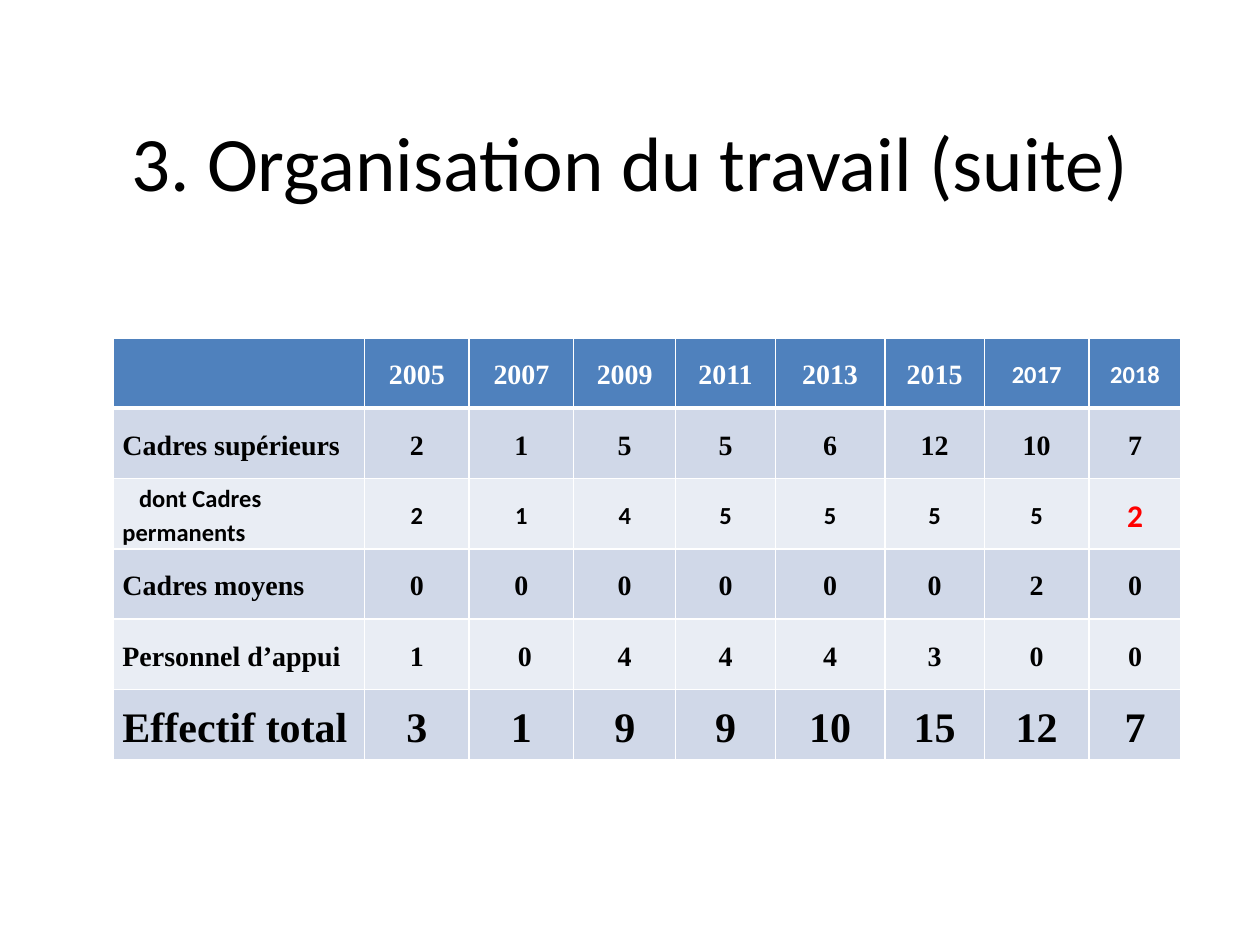
from lxml.etree import SubElement
from pptx import Presentation
from pptx.dml.color import RGBColor
from pptx.enum.text import MSO_ANCHOR, PP_ALIGN
from pptx.oxml.ns import qn
from pptx.util import Pt

TITLE = "3. Organisation du travail (suite)"
YEARS = ["", "2005", "2007", "2009", "2011", "2013", "2015", "2017", "2018"]
STAFF = [
    ["Cadres supérieurs", "2", "1", "5", "5", "6", "12", "10", "7"],
    ["dont Cadres permanents", "2", "1", "4", "5", "5", "5", "5", "2"],
    ["Cadres moyens", "0", "0", "0", "0", "0", "0", "2", "0"],
    ["Personnel d’appui", "1", " 0", "4", "4", "4", "3", "0", "0"],
    ["Effectif total", "3", "1", "9", "9", "10", "15", "12", "7"],
]
ROWS = [YEARS] + STAFF
COLUMN_WIDTHS = [143.3, 59.8, 59.8, 58.3, 56.9, 62.6, 56.9, 59.8, 52.6]
ROW_HEIGHT = 40.2
SUBGROUP_ROW, TOTAL_ROW = 2, 5
SUBGROUP_INDENT = 9.5
COLORS = {
    "header": "4F81BD",
    "odd": "D0D8E8",
    "even": "E9EDF4",
    "white": "FFFFFF",
    "text": "000000",
    "alert": "FF0000",
}


def rgb(name):
    return RGBColor.from_string(COLORS[name])


def cell_font(row, column):
    """Return the font name, size and colour name of a table cell."""
    if row == 0:
        recent = column >= 7
        return ("Calibri", 14, "white") if recent else ("Times New Roman", 16, "white")
    if row == SUBGROUP_ROW:
        last = column == len(YEARS) - 1
        return ("Calibri", 18, "alert") if last else ("Calibri", 14, "text")
    return "Times New Roman", 24 if row == TOTAL_ROW else 16, "text"


def add_border(cell, side, width):
    line = SubElement(cell._tc.get_or_add_tcPr(), qn(f"a:{side}"), w=str(Pt(width)))
    fill = SubElement(line, qn("a:solidFill"))
    SubElement(fill, qn("a:srgbClr"), val=COLORS["white"])


def format_cell(cell, row, column):
    for side in ("lnL", "lnR", "lnT", "lnB"):
        if side != "lnT" or row == 0:
            add_border(cell, side, 3 if row == 0 and side == "lnB" else 1)
    cell.fill.solid()
    band = "header" if row == 0 else ("even", "odd")[row % 2]
    cell.fill.fore_color.rgb = rgb(band)
    cell.vertical_anchor = MSO_ANCHOR.MIDDLE
    cell.margin_left = cell.margin_right = Pt(5)
    cell.margin_top = cell.margin_bottom = 0

    cell.text = ROWS[row][column]
    para = cell.text_frame.paragraphs[0]
    para.alignment = PP_ALIGN.CENTER if column else PP_ALIGN.LEFT
    para.line_spacing = 1.15
    para.space_after = Pt(10)
    if row == SUBGROUP_ROW and column == 0:
        para._p.get_or_add_pPr().set("indent", str(Pt(SUBGROUP_INDENT)))
    name, size, color = cell_font(row, column)
    para.font.name = name
    para.font.size = Pt(size)
    para.font.bold = True
    para.font.color.rgb = rgb(color)


def add_title(page):
    box = page.shapes.title
    box.left, box.top, box.width, box.height = Pt(36), Pt(60.5), Pt(648), Pt(51)
    frame = box.text_frame
    frame.text = TITLE
    frame.vertical_anchor = MSO_ANCHOR.TOP
    frame.margin_top = Pt(5)
    para = frame.paragraphs[0]
    para.alignment = PP_ALIGN.CENTER
    para.font.name = "Calibri"
    para.font.size = Pt(44)
    para.font.color.rgb = rgb("text")


def add_staff_table(page):
    table = page.shapes.add_table(
        len(ROWS), len(YEARS), Pt(65), Pt(193),
        Pt(sum(COLUMN_WIDTHS)), Pt(ROW_HEIGHT * len(ROWS)),
    ).table
    for column, width in zip(table.columns, COLUMN_WIDTHS):
        column.width = Pt(width)
    for row_index, row in enumerate(table.rows):
        row.height = Pt(ROW_HEIGHT)
        for column_index, cell in enumerate(row.cells):
            format_cell(cell, row_index, column_index)


def main():
    deck = Presentation()
    deck.slide_width, deck.slide_height = Pt(720), Pt(540)
    page = deck.slides.add_slide(deck.slide_layouts[5])
    add_title(page)
    add_staff_table(page)
    deck.save("out.pptx")


if __name__ == "__main__":
    main()
